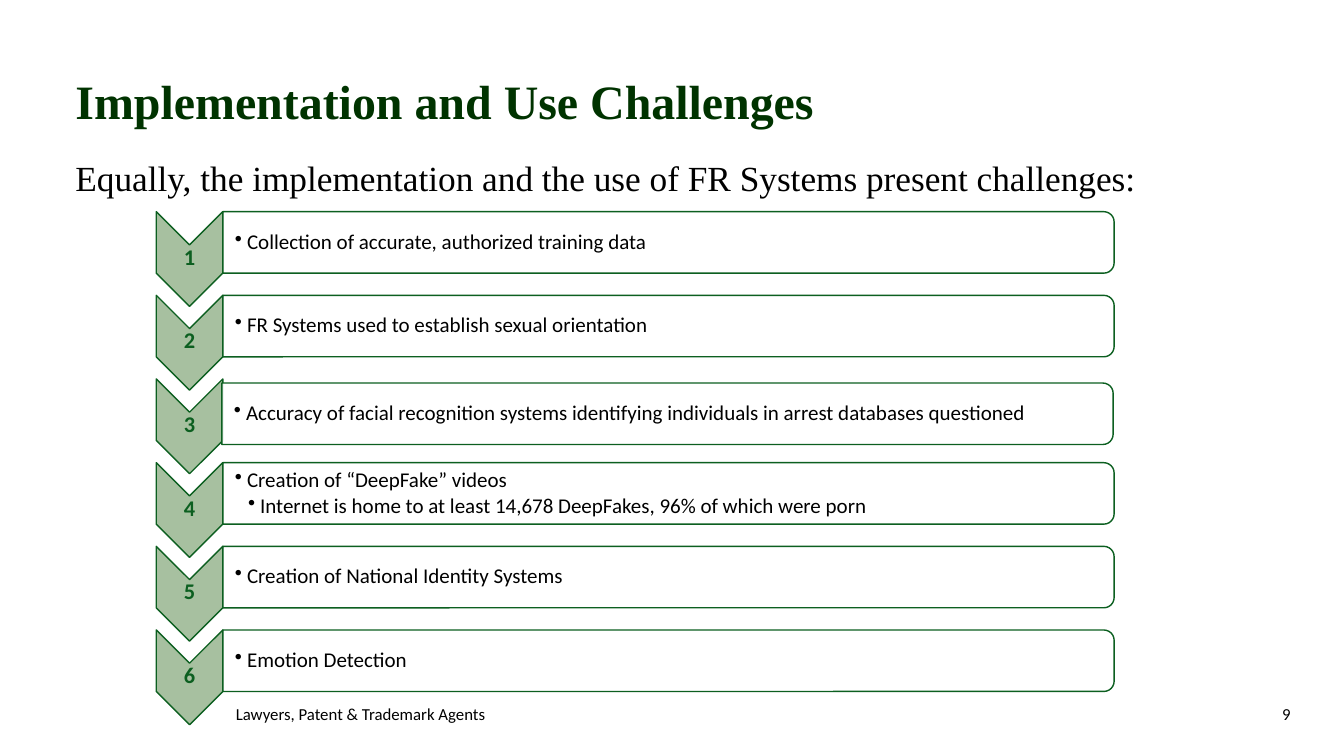
from lxml.etree import SubElement
from pptx import Presentation
from pptx.dml.color import RGBColor
from pptx.enum.shapes import MSO_SHAPE
from pptx.enum.text import MSO_ANCHOR, PP_ALIGN
from pptx.oxml.ns import qn
from pptx.util import Inches, Pt

BLACK, DARK_GREEN, GREEN, SAGE, WHITE = "000000", "003300", "0C5F20", "A7C0A0", "FFFFFF"
HEADING_FONT, BODY_FONT = "Times New Roman", "Calibri"
ROW_PITCH = 0.83
CHEVRON_LENGTH, CHEVRON_WIDTH = 0.94, 0.66
BAR_WIDTH, BAR_HEIGHT = 8.84, 0.61

# Each challenge: its lines, and how far its bar is nudged from the grid
CHALLENGES = [
    (["Collection of accurate, authorized training data"], (0, 0)),
    (["FR Systems used to establish sexual orientation"], (0, 0)),
    (["Accuracy of facial recognition systems identifying individuals "
      "in arrest databases questioned"], (-0.01, 0.04)),
    (["Creation of “DeepFake” videos",
      "Internet is home to at least 14,678 DeepFakes, 96% of which were porn"], (0, 0)),
    (["Creation of National Identity Systems"], (0, 0)),
    (["Emotion Detection"], (0, 0)),
]


def color(hex_string):
    return RGBColor.from_string(hex_string)


def add_frame(slide, left, top, width, height, insets=(0.1, 0.05, 0.1, 0.05),
              anchor=MSO_ANCHOR.TOP):
    box = slide.shapes.add_textbox(Inches(left), Inches(top), Inches(width), Inches(height))
    frame = box.text_frame
    frame.word_wrap = True
    frame.vertical_anchor = anchor
    (frame.margin_left, frame.margin_top,
     frame.margin_right, frame.margin_bottom) = map(Inches, insets)
    return frame


def style(paragraph, text, size, font=BODY_FONT, hex_color=BLACK, bold=False,
          align=PP_ALIGN.LEFT):
    paragraph.text = text
    paragraph.alignment = align
    paragraph.font.size = Pt(size)
    paragraph.font.name = font
    paragraph.font.bold = bold
    paragraph.font.color.rgb = color(hex_color)


def add_bullet(paragraph, indent):
    properties = paragraph._p.get_or_add_pPr()
    properties.set("marL", str(Inches(indent)))
    properties.set("indent", str(Inches(-0.12)))
    SubElement(properties, qn("a:buChar")).set("char", "•")


def add_turned_shape(slide, kind, center_x, center_y, width, height, fill):
    """Add a shape turned by 90 degrees about its centre."""
    shape = slide.shapes.add_shape(
        kind, Inches(center_x - width / 2), Inches(center_y - height / 2),
        Inches(width), Inches(height))
    shape.rotation = 90
    shape.shadow.inherit = False
    shape.fill.solid()
    shape.fill.fore_color.rgb = color(fill)
    shape.line.color.rgb = color(GREEN)
    shape.line.width = Pt(1)
    return shape


def add_heading(slide, left, top, width, height):
    frame = add_frame(slide, left, top, width, height)
    style(frame.paragraphs[0], "Implementation and Use Challenges", 34.2,
          HEADING_FONT, DARK_GREEN, bold=True)
    lead_in = frame.add_paragraph()
    style(lead_in, "Equally, the implementation and the use of FR Systems present challenges:",
          25.2, HEADING_FONT)
    lead_in.space_before = Pt(19.4)


def add_challenge(slide, left, top, number, lines, nudge):
    # Numbered chevron
    chevron_x = left + CHEVRON_WIDTH / 2
    add_turned_shape(slide, MSO_SHAPE.CHEVRON, chevron_x, top + CHEVRON_LENGTH / 2,
                     CHEVRON_LENGTH, CHEVRON_WIDTH, SAGE)
    number_frame = add_frame(slide, left, top + 0.32, CHEVRON_WIDTH, 0.28,
                             (0.01,) * 4, MSO_ANCHOR.MIDDLE)
    style(number_frame.paragraphs[0], str(number), 16, hex_color=GREEN, bold=True,
          align=PP_ALIGN.CENTER)
    number_frame.paragraphs[0].line_spacing = 0.9

    # Bar with rounded right corners
    bar_left = left + CHEVRON_WIDTH + nudge[0]
    bar_y = top + BAR_HEIGHT / 2 + nudge[1]
    bar = add_turned_shape(slide, MSO_SHAPE.ROUND_2_SAME_RECTANGLE,
                           bar_left + BAR_WIDTH / 2, bar_y, BAR_HEIGHT, BAR_WIDTH, WHITE)
    bar_color = bar.fill._xPr.find(qn("a:solidFill"))[0]
    SubElement(bar_color, qn("a:alpha")).set("val", "90000")

    # Bulleted text
    frame = add_frame(slide, bar_left, bar_y - 0.275, BAR_WIDTH - 0.03, 0.55,
                      (0.12, 0.01, 0.01, 0.01), MSO_ANCHOR.MIDDLE)
    for depth, line in enumerate(lines):
        paragraph = frame.add_paragraph() if depth else frame.paragraphs[0]
        add_bullet(paragraph, 0.12 + 0.13 * depth)
        style(paragraph, line, 15)
        paragraph.level = depth + 1
        paragraph.line_spacing = 0.9
        if depth:
            paragraph.space_before = Pt(2.25)


def add_challenges(slide, left, top):
    for row, (lines, nudge) in enumerate(CHALLENGES):
        add_challenge(slide, left, top + row * ROW_PITCH, row + 1, lines, nudge)


def add_footer(slide, left, top, right):
    width, height = 3.36, 0.3
    firm = add_frame(slide, left, top, width, height)
    style(firm.paragraphs[0], "Lawyers, Patent & Trademark Agents", 12)
    page = add_frame(slide, right - width, top, width, height)
    style(page.paragraphs[0], "9", 12, align=PP_ALIGN.RIGHT)


def main():
    presentation = Presentation()
    presentation.slide_width = Inches(13.33)
    presentation.slide_height = Inches(7.5)
    slide = presentation.slides.add_slide(presentation.slide_layouts[6])
    add_footer(slide, 2.24, 6.93, 12.9)
    add_heading(slide, 0.65, 0.66, 12.34, 1.3)
    add_challenges(slide, 1.55, 2.1)
    presentation.save("out.pptx")


if __name__ == "__main__":
    main()
